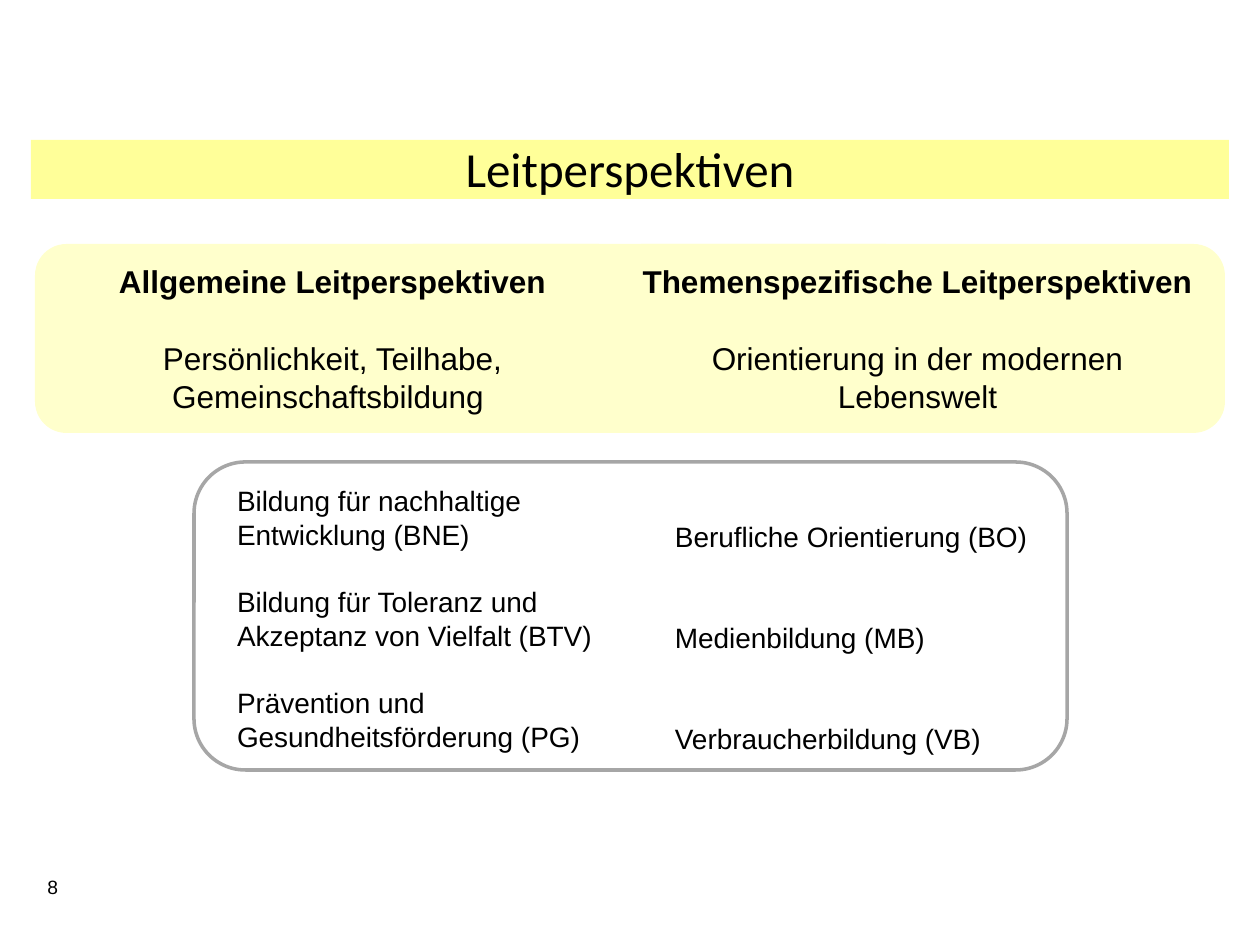
from dataclasses import dataclass

from pptx import Presentation
from pptx.dml.color import RGBColor
from pptx.enum.shapes import MSO_SHAPE
from pptx.enum.text import MSO_ANCHOR, PP_ALIGN
from pptx.util import Emu, Pt

PX_PER_INCH = 126
EMU_PER_PX = 914400 / PX_PER_INCH

BLACK = RGBColor(0x00, 0x00, 0x00)
GREY = RGBColor(0xA6, 0xA6, 0xA6)
YELLOW = RGBColor(0xFF, 0xFF, 0x99)
PALE_YELLOW = RGBColor(0xFF, 0xFF, 0xCC)

RECTANGLE = MSO_SHAPE.RECTANGLE
ROUNDED = MSO_SHAPE.ROUNDED_RECTANGLE
TOP, MIDDLE = MSO_ANCHOR.TOP, MSO_ANCHOR.MIDDLE
LEFT, CENTER = PP_ALIGN.LEFT, PP_ALIGN.CENTER

LIST_PITCH = 19.2
HEADING_GAP = 22.5
LIST_INDENT = 28


@dataclass(frozen=True)
class Area:
    left: int
    top: int
    width: int
    height: int


@dataclass(frozen=True)
class Perspective:
    area: Area
    heading: str
    description: str


@dataclass(frozen=True)
class TopicList:
    area: Area
    inset_top: int
    gap: float
    topics: tuple[tuple[str, ...], ...]
    outline: RGBColor | None = None


PERSPECTIVES = (
    Perspective(Area(610, 244, 615, 189), "Themenspezifische Leitperspektiven",
                "Orientierung in der modernen Lebenswelt"),
    Perspective(Area(35, 244, 595, 189), "Allgemeine Leitperspektiven",
                "Persönlichkeit, Teilhabe, Gemeinschaftsbildung "),
)

TOPIC_LISTS = (
    TopicList(Area(194, 462, 873, 308), 7, LIST_PITCH, (
        ("Bildung für nachhaltige", "Entwicklung (BNE)"),
        ("Bildung für Toleranz und", "Akzeptanz von Vielfalt (BTV)"),
        ("Prävention und", "Gesundheitsförderung (PG)"),
    ), GREY),
    TopicList(Area(630, 462, 436, 348), 41, 2 * LIST_PITCH, (
        ("Berufliche Orientierung (BO)",),
        ("Medienbildung (MB)",),
        ("Verbraucherbildung (VB)",),
    )),
)


def px(length: int) -> Emu:
    return Emu(round(length * EMU_PER_PX))


def place(area: Area) -> tuple[Emu, Emu, Emu, Emu]:
    return px(area.left), px(area.top), px(area.width), px(area.height)


def add_box(slide, kind, area: Area, fill=None, outline=None):
    box = slide.shapes.add_shape(kind, *place(area))
    box.shadow.inherit = False
    if fill is None:
        box.fill.background()
    else:
        box.fill.solid()
        box.fill.fore_color.rgb = fill
    if outline is None:
        box.line.fill.background()
    else:
        box.line.color.rgb = outline
        box.line.width = Pt(2)
    return box


def write(box, text: str, *, size: float, font: str = "Arial", bold: bool = False,
          align=LEFT, anchor=TOP, before: float = 0, pitch: float | None = None) -> None:
    """Add one paragraph, using the empty first one if there is no text yet."""
    frame = box.text_frame
    frame.word_wrap = True
    frame.vertical_anchor = anchor
    para = frame.add_paragraph() if frame.text else frame.paragraphs[0]
    para.alignment = align
    if before:
        para.space_before = Pt(before)
    if pitch:
        para.line_spacing = Pt(pitch)
    span = para.add_run()
    span.text = text
    span.font.name = font
    span.font.size = Pt(size)
    span.font.bold = bold
    span.font.color.rgb = BLACK


def draw_perspective(slide, perspective: Perspective) -> None:
    box = add_box(slide, ROUNDED, perspective.area, PALE_YELLOW)
    write(box, perspective.heading, size=18, bold=True, align=CENTER, anchor=MIDDLE)
    write(box, perspective.description, size=18, align=CENTER, anchor=MIDDLE,
          before=HEADING_GAP)


def draw_topics(slide, topic_list: TopicList) -> None:
    box = add_box(slide, ROUNDED, topic_list.area, outline=topic_list.outline)
    box.text_frame.margin_left = px(LIST_INDENT)
    box.text_frame.margin_top = px(topic_list.inset_top)
    for topic_index, lines in enumerate(topic_list.topics):
        for line_index, line in enumerate(lines):
            starts_topic = topic_index > 0 and line_index == 0
            write(box, line, size=16, pitch=LIST_PITCH,
                  before=topic_list.gap if starts_topic else 0)


def main() -> None:
    deck = Presentation()
    deck.slide_width, deck.slide_height = px(1260), px(945)
    page = deck.slides.add_slide(deck.slide_layouts[6])

    add_box(page, RECTANGLE, Area(31, 140, 1198, 59), YELLOW)
    title = page.shapes.add_textbox(*place(Area(35, 132, 1190, 72)))
    write(title, "Leitperspektiven", size=28, font="Calibri", align=CENTER)
    number = page.shapes.add_textbox(*place(Area(35, 869, 69, 59)))
    write(number, "8", size=11)

    for topic_list in TOPIC_LISTS:
        draw_topics(page, topic_list)
    add_box(page, ROUNDED, Area(382, 244, 535, 189), PALE_YELLOW)
    for perspective in PERSPECTIVES:
        draw_perspective(page, perspective)

    deck.save("out.pptx")


if __name__ == "__main__":
    main()
